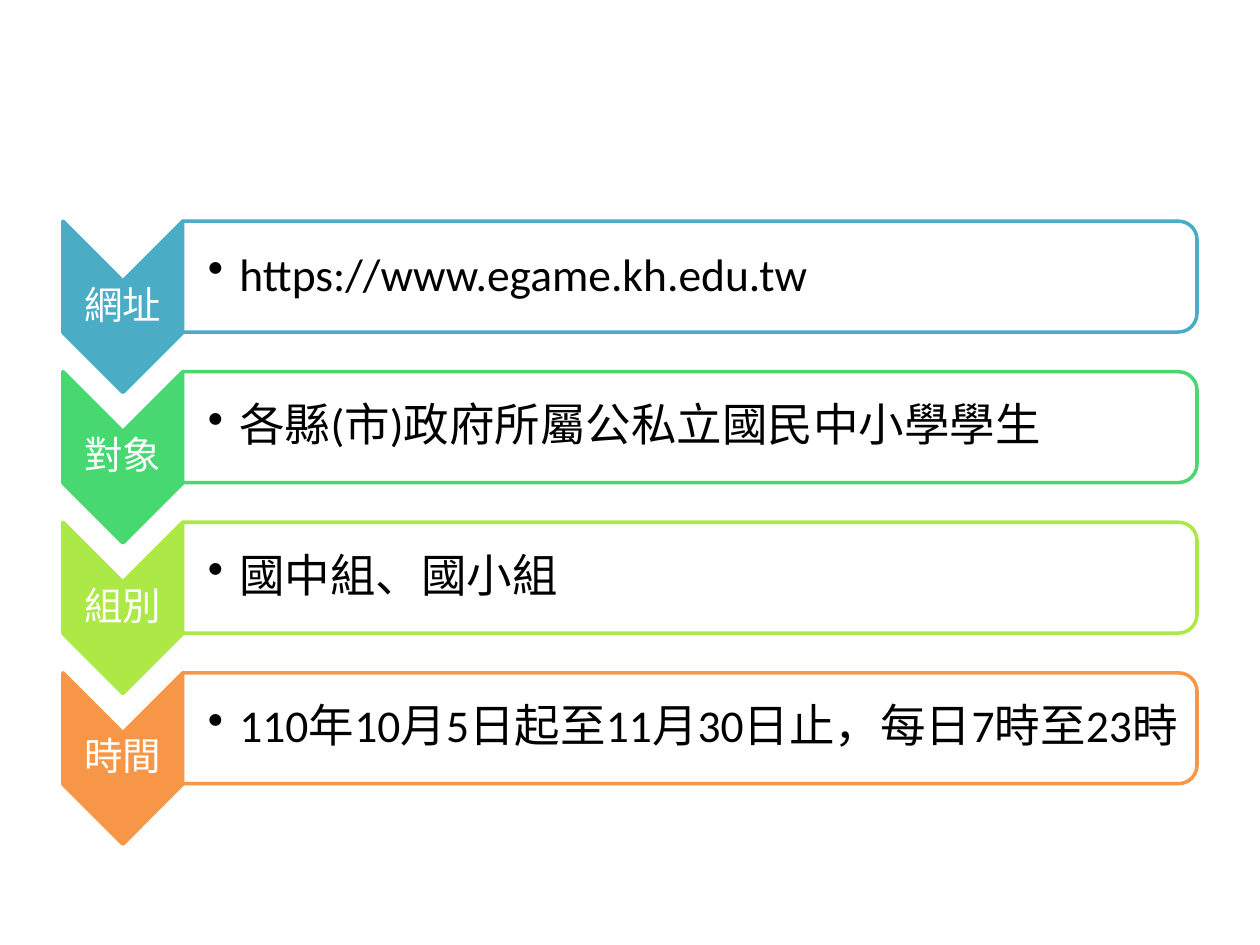
from lxml import etree
from pptx import Presentation
from pptx.dml.color import RGBColor
from pptx.enum import shapes, text
from pptx.oxml.ns import qn
from pptx.util import Inches, Pt

ROWS = [
    ("網址", "https://www.egame.kh.edu.tw", "4BACC6"),
    ("對象", "各縣(市)政府所屬公私立國民中小學學生", "47D872"),
    ("組別", "國中組、國小組", "ACE946"),
    ("時間", "110年10月5日起至11月30日止，每日7時至23時", "F79646"),
]
LEFT, TOP, PITCH = 0.5, 1.755, 1.195
ARROW_W, ARROW_H = 0.95, 1.36
BAND_W, BAND_H = 8.05, 0.88
PAD = 0.02


def rgb(value):
    return RGBColor.from_string(value)


def add_turned(s, kind, x, y, w, h, fill, line):
    """Add a shape turned by 90 degrees that covers x, y, w, h on the slide."""
    sp = s.shapes.add_shape(kind, Inches(x + (w - h) / 2), Inches(y + (h - w) / 2),
                            Inches(h), Inches(w))
    sp.rotation = 90
    sp.shadow.inherit = False
    sp.fill.solid()
    sp.fill.fore_color.rgb = rgb(fill)
    sp.line.color.rgb = rgb(line)
    sp.line.width = Pt(2)
    return sp


def add_text(s, x, y, w, h, words, size, color, inset=PAD):
    tf = s.shapes.add_textbox(Inches(x), Inches(y), Inches(w), Inches(h)).text_frame
    tf.word_wrap = True
    tf.vertical_anchor = text.MSO_ANCHOR.MIDDLE
    tf.margin_left = Inches(inset)
    tf.margin_top = tf.margin_right = tf.margin_bottom = Inches(PAD)
    p = tf.paragraphs[0]
    p.line_spacing = 0.9
    r = p.add_run()
    r.text = words
    r.font.name = "Calibri"
    r.font.size = Pt(size)
    r.font.color.rgb = rgb(color)
    return p


def add_bullet(p):
    pPr = p._p.get_or_add_pPr()
    pPr.set("marL", str(Inches(0.25)))
    pPr.set("indent", str(-Inches(0.25)))
    etree.SubElement(pPr, qn("a:buChar")).set("char", "•")


prs = Presentation()
prs.slide_width, prs.slide_height = Inches(10), Inches(7.5)
s = prs.slides.add_slide(prs.slide_layouts[6])

for i, (label, detail, color) in enumerate(ROWS):
    y = TOP + i * PITCH
    band_x = LEFT + ARROW_W

    # Downward chevron with its label
    add_turned(s, shapes.MSO_SHAPE.CHEVRON, LEFT, y, ARROW_W, ARROW_H, color, color)
    p = add_text(s, LEFT, y + ARROW_W / 2, ARROW_W, ARROW_H - ARROW_W, label, 22, "FFFFFF")
    p.alignment = text.PP_ALIGN.CENTER

    # Outlined band with the detail
    band = add_turned(s, shapes.MSO_SHAPE.ROUND_2_SAME_RECTANGLE,
                      band_x, y, BAND_W, BAND_H, "FFFFFF", color)
    fill_color = band.fill._xPr.find(qn("a:solidFill"))[0]
    etree.SubElement(fill_color, qn("a:alpha")).set("val", "90000")
    p = add_text(s, band_x, y + 0.04, BAND_W - 0.04, BAND_H - 0.08,
                 detail, 26, "000000", inset=0.2)
    add_bullet(p)

prs.save("out.pptx")
